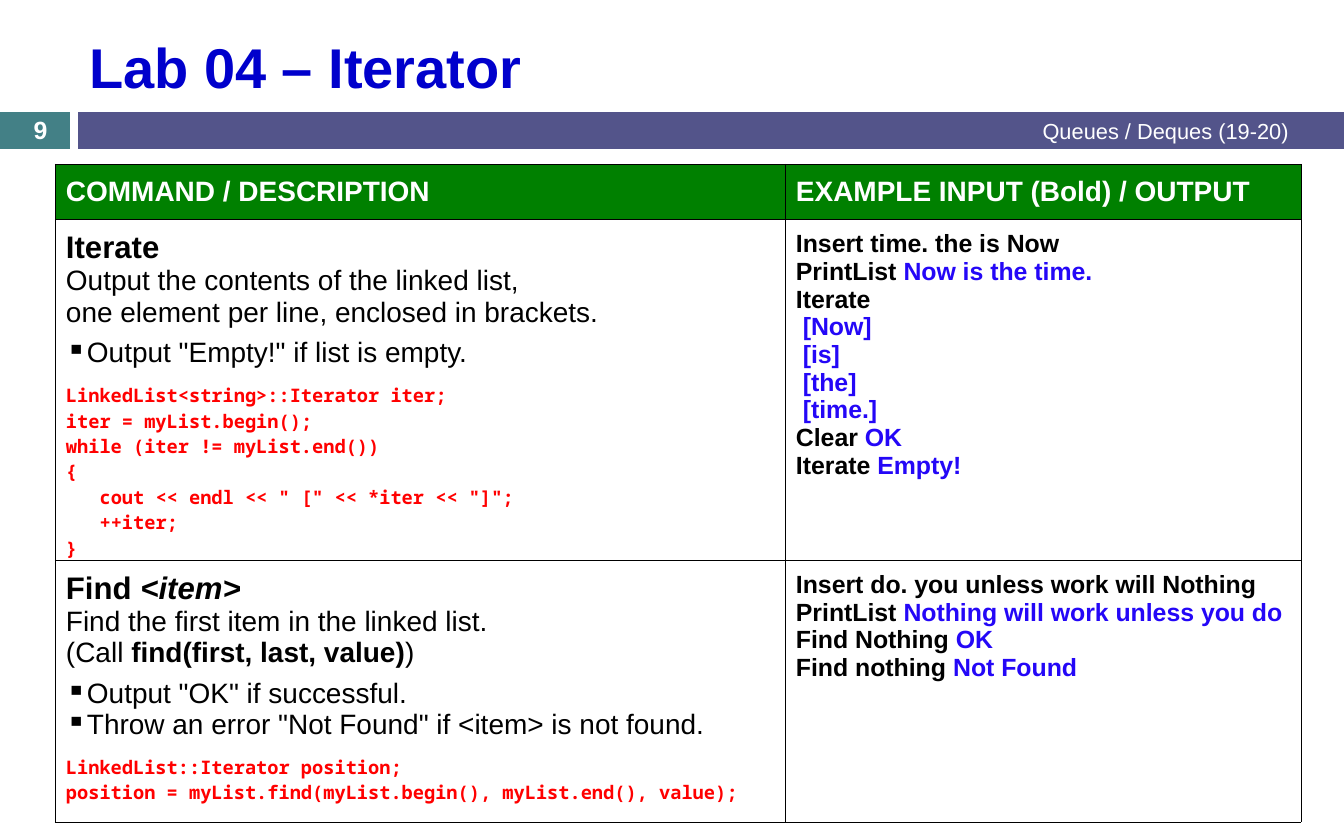
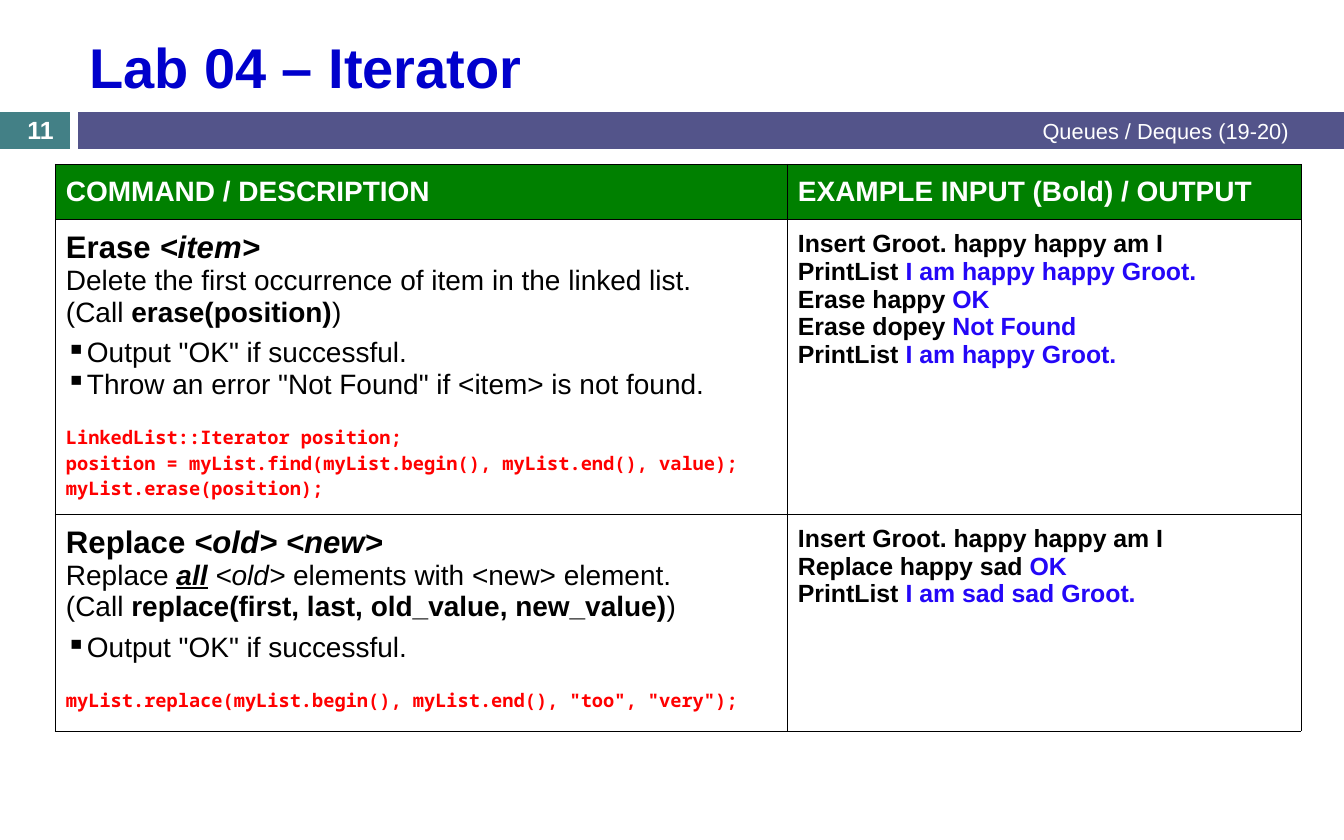
from lxml.etree import SubElement
from pptx import Presentation
from pptx.dml.color import RGBColor
from pptx.enum.shapes import MSO_SHAPE
from pptx.enum.text import MSO_ANCHOR, MSO_AUTO_SIZE, PP_ALIGN
from pptx.oxml.ns import qn
from pptx.util import Pt

PX = 914400 / 112
WHITE = RGBColor(0xFF, 0xFF, 0xFF)
BLACK = RGBColor(0, 0, 0)
TEAL = RGBColor(0x43, 0x80, 0x86)
VIOLET = RGBColor(0x53, 0x54, 0x8A)
NAVY = RGBColor(0, 0, 0xCC)
GREEN = RGBColor(0, 0x80, 0)
BLUE = RGBColor(0x24, 0x07, 0xF7)
RED = RGBColor(0xFF, 0, 0)
SANS, MONO = "Arial", "Noto Sans Mono"
HEADS = ["COMMAND / DESCRIPTION", "EXAMPLE INPUT (Bold) / OUTPUT"]
MISSING = 'Throw an error "Not Found" if <item> is not found.'
SUCCESS = 'Output "OK" if successful.'
FIND = "position = myList.find(myList.begin(), myList.end(), value);"

# Each command: top, height, intro runs (text, size, style), bullets, code, examples
ITERATE = (
    164, 344,
    [("Iterate\n", 20, "b"),
     ("Output the contents of the linked list,\n"
      "one element per line, enclosed in brackets.", 18, "")],
    ['Output "Empty!" if list is empty.'],
    [(0, "LinkedList<string>::Iterator iter;"),
     (0, "iter = myList.begin();"),
     (0, "while (iter != myList.end())"),
     (0, "{"),
     (3, 'cout << endl << " [" << *iter << "]";'),
     (3, "++iter;"),
     (0, "}")],
    [("Insert time. the is Now", ""), ("PrintList ", "Now is the time."),
     ("Iterate", ""), ("", " [Now]"), ("", " [is]"), ("", " [the]"),
     ("", " [time.]"), ("Clear ", "OK"), ("Iterate ", "Empty!")])
SEARCH = (
    560, 257,
    [("Find ", 20, "b"), ("<item>\n", 20, "bi"),
     ("Find the first item in the linked list.\n(Call ", 18, ""),
     ("find(first, last, value)", 18, "b"), (")", 18, "")],
    [SUCCESS, MISSING],
    [(0, "LinkedList::Iterator position;"), (0, FIND)],
    [("Insert do. you unless work will Nothing", ""),
     ("PrintList ", "Nothing will work unless you do"),
     ("Find Nothing ", "OK"), ("Find nothing ", "Not Found")])
ERASE = (
    164, 294,
    [("Erase ", 20, "b"), ("<item>\n", 20, "bi"),
     ("Delete the first occurrence of item in the linked list.\n(Call ", 18, ""),
     ("erase(position)", 18, "b"), (")", 18, "")],
    [SUCCESS, MISSING],
    [(0, "LinkedList::Iterator position;"), (0, FIND + " myList.erase(position);")],
    [("Insert Groot. happy happy am I", ""),
     ("PrintList ", "I am happy happy Groot."), ("Erase happy ", "OK"),
     ("Erase dopey ", "Not Found"), ("PrintList ", "I am happy Groot.")])
REPLACE = (
    514, 211,
    [("Replace ", 20, "b"), ("<old> <new>\n", 20, "bi"),
     ("Replace ", 18, ""), ("all", 18, "biu"), (" ", 18, ""),
     ("<old>", 18, "i"), (" elements with <new> element.\n(Call ", 18, ""),
     ("replace(first, last, old_value, new_value)", 18, "b"), (")", 18, "")],
    [SUCCESS],
    [(0, 'myList.replace(myList.begin(), myList.end(), "too", "very");')],
    [("Insert Groot. happy happy am I", ""), ("Replace happy sad ", "OK"),
     ("PrintList ", "I am sad sad Groot.")])

# Each slide: number, column widths, points above the code, commands
SLIDES = [("9", (730, 516), 9, (ITERATE, SEARCH)),
          ("11", (732, 514), 16, (ERASE, REPLACE))]


def px(*nums):
    return [round(num * PX) for num in nums]


def write(frame, runs, size=None, bold=None, font=SANS):
    """Add a paragraph of (text, colour, size, style) runs to the frame."""
    par = frame.paragraphs[0]
    if par.runs:
        par = frame.add_paragraph()
    par.font.name, par.font.bold = font, bold
    if size:
        par.font.size = Pt(size)
    for text, color, *look in runs:
        for num, part in enumerate(text.split("\n")):
            if num:
                par.add_line_break()
            if not part:
                continue
            run = par.add_run()
            run.text = part
            run.font.color.rgb = color
            if look:
                run.font.size = Pt(look[0])
                run.font.bold = "b" in look[1]
                run.font.italic = "i" in look[1]
                run.font.underline = "u" in look[1]
    return par


deck = Presentation()
deck.slide_width, deck.slide_height = px(1344, 840)

for number, widths, gap, commands in SLIDES:
    slide = deck.slides.add_slide(deck.slide_layouts[5])
    shapes = slide.shapes

    # Bands
    for left, width, color in [(0, 70, TEAL), (78, 1266, VIOLET)]:
        band = shapes.add_shape(MSO_SHAPE.RECTANGLE, *px(left, 112, width, 37))
        band.shadow.inherit = False
        band.fill.solid()
        band.fill.fore_color.rgb = color
        band.line.fill.background()

    # Title
    title = shapes.title
    title.left, title.top, title.width, title.height = px(78, 21, 1222, 90)
    frame = title.text_frame
    frame.auto_size = MSO_AUTO_SIZE.NONE
    frame.vertical_anchor = MSO_ANCHOR.MIDDLE
    write(frame, [("Lab 04 – Iterator", NAVY)], 36, True).alignment = PP_ALIGN.LEFT

    # Topic and slide number
    for box, text, size, bold, align in [
            ((504, 111, 796, 39), "Queues / Deques (19-20)", 14, False, PP_ALIGN.RIGHT),
            ((0, 113, 81, 34), number, 16, True, PP_ALIGN.CENTER)]:
        frame = shapes.add_textbox(*px(*box)).text_frame
        frame.word_wrap = True
        frame.vertical_anchor = MSO_ANCHOR.MIDDLE
        write(frame, [(text, WHITE)], size, bold).alignment = align

    # Command tables, the first one with a header row
    for order, (top, height, intro, bullets, code, samples) in enumerate(commands):
        rows = [height] if order else [54, height]
        table = shapes.add_table(
            len(rows), 2, *px(55, top, sum(widths), sum(rows))).table
        table.first_row = not order
        table.horz_banding = False
        for col, width in zip(table.columns, px(*widths)):
            col.width = width
        for row, tall in zip(table.rows, px(*rows)):
            row.height = tall

        # Borders, insets and fills
        for cell in table.iter_cells():
            (cell.margin_left, cell.margin_right,
             cell.margin_top, cell.margin_bottom) = px(11, 11, 11, 11)
            props = cell._tc.get_or_add_tcPr()
            for side in "LRTB":
                line = SubElement(props, qn("a:ln" + side), w=str(Pt(0.3)))
                fill = SubElement(line, qn("a:solidFill"))
                SubElement(fill, qn("a:srgbClr"), val=str(BLACK))
            cell.fill.solid()
            cell.fill.fore_color.rgb = WHITE
        if not order:
            for cell, head in zip(table.rows[0].cells, HEADS):
                cell.fill.fore_color.rgb = GREEN
                cell.vertical_anchor = MSO_ANCHOR.MIDDLE
                write(cell.text_frame, [(head, WHITE)], 18, True)

        # Description, bullets and code
        left, right = [cell.text_frame for cell in table.rows[len(rows) - 1].cells]
        par = write(left, [(text, BLACK, size, style) for text, size, style in intro])
        par.space_after = Pt(6)
        for text in bullets:
            props = write(left, [(text, BLACK)], 18, False)._p.get_or_add_pPr()
            indent = px(21)[0]
            props.set("marL", str(indent))
            props.set("indent", str(-indent))
            mark = props.makeelement(qn("a:buChar"), {"char": "▪"})
            props.insert_element_before(mark, "a:tabLst", "a:defRPr", "a:extLst")
        for num, (depth, text) in enumerate(code):
            par = write(left, [(text, RED)], 12, True, MONO)
            if depth:
                par._p.get_or_add_pPr().set("marL", str(px(depth * 11.2)[0]))
            if num == 0:
                par.space_before = Pt(gap)

        # Example input and output
        for given, shown in samples:
            write(right, [(given, BLACK), (shown, BLUE)], 16, True)

deck.save("out.pptx")
